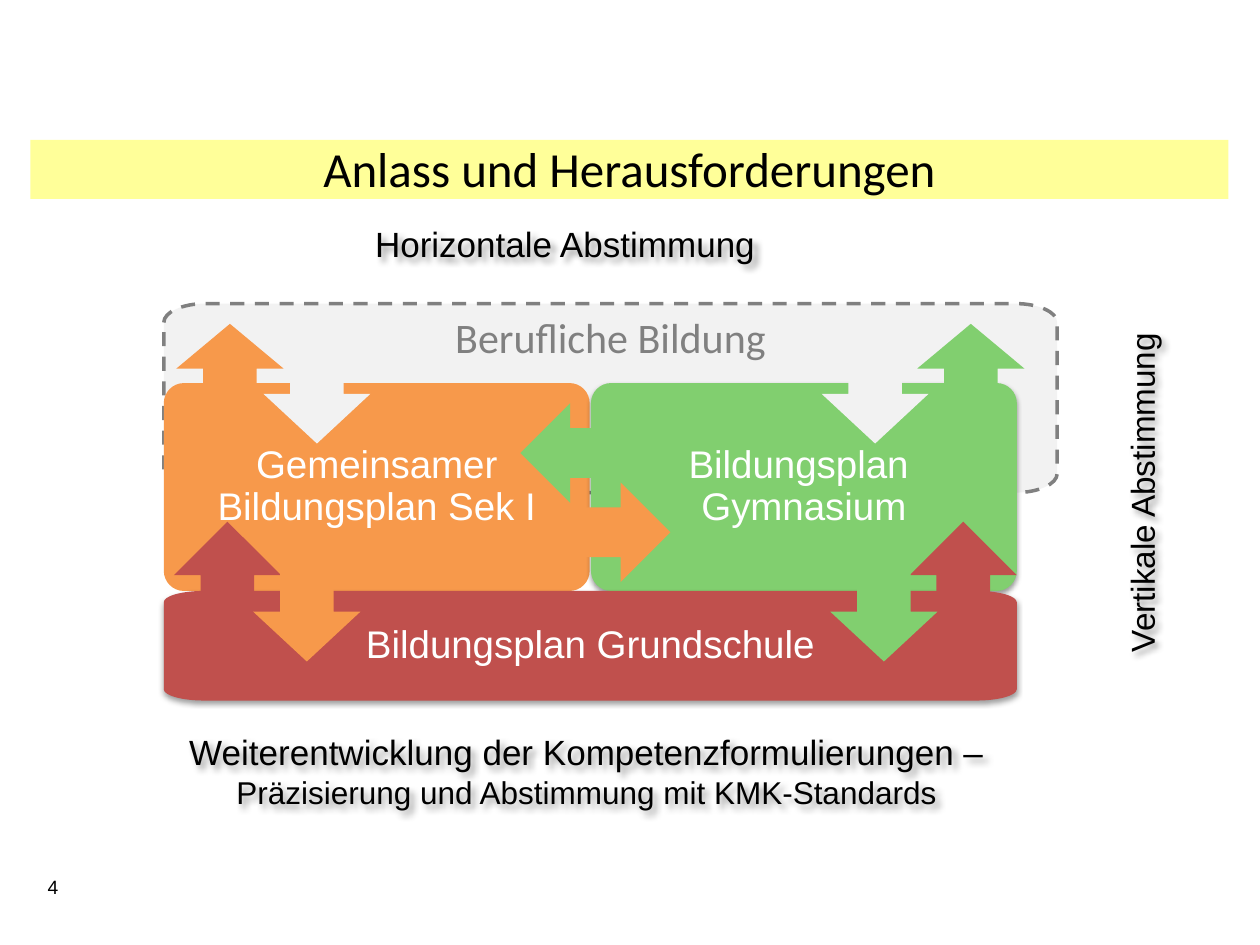
from dataclasses import dataclass

from lxml.etree import SubElement as Sub
from pptx import Presentation
from pptx.dml.color import RGBColor as Rgb
from pptx.enum.dml import MSO_LINE as Dash
from pptx.enum.shapes import MSO_SHAPE as Kind
from pptx.enum.text import MSO_ANCHOR as Anchor, PP_ALIGN as Align
from pptx.oxml.ns import qn
from pptx.util import Inches, Pt


@dataclass(frozen=True)
class Theme:
    black: str = "000000"
    white: str = "FFFFFF"
    band: str = "FFFF99"
    pale: str = "F2F2F2"
    gray: str = "808080"
    orange: str = "F7994B"
    green: str = "81CF6F"
    red: str = "C0504D"
    body: str = "Arial"
    head: str = "Calibri"
    title: int = 28
    top: int = 24
    plan: int = 22
    label: int = 20
    side: int = 19
    small: int = 18
    page: int = 11


T = Theme()


def paint(shape, fill=None):
    shape.shadow.inherit = False
    shape.line.fill.background()
    if fill:
        shape.fill.solid()
        shape.fill.fore_color.rgb = Rgb.from_string(fill)
    else:
        shape.fill.background()


def shade(shape, blur, dist, angle, alpha):
    effects = shape.element.spPr.find(qn("a:effectLst"))
    outer = Sub(effects, qn("a:outerShdw"), blurRad=str(Pt(blur)),
                dist=str(Pt(dist)), dir=str(angle * 60000), rotWithShape="0")
    color = Sub(outer, qn("a:srgbClr"), val=T.black)
    Sub(color, qn("a:alpha"), val=str(alpha * 1000))


def write(shape, runs, color=T.black, font=T.body, align=Align.CENTER,
          anchor=Anchor.MIDDLE, space=None, inset=None):
    frame = shape.text_frame
    frame.word_wrap = True
    frame.vertical_anchor = anchor
    if inset:
        frame.margin_left = frame.margin_right = Inches(inset)
        frame.margin_top = frame.margin_bottom = Inches(inset)
    para = frame.paragraphs[0]
    para.alignment = align
    para.line_spacing = space
    for text, size in runs:
        run = para.add_run()
        run.text = text
        run.font.size = Pt(size)
        run.font.name = font
        run.font.color.rgb = Rgb.from_string(color)


def block(shapes, kind, box, fill=None, turn=0):
    shape = shapes.add_shape(kind, *map(Inches, box))
    paint(shape, fill)
    shape.rotation = turn
    return shape


def note(shapes, box, runs, **style):
    write(shapes.add_textbox(*map(Inches, box)), runs, anchor=Anchor.TOP, **style)


def label(shape, runs):
    write(shape, runs)
    shade(shape, 4, 3, 45, 40)


def outline(shapes, box, curve, fill=None):
    x, y, w, h = map(Inches, box)
    rx, ry = map(Inches, curve)
    pen = shapes.build_freeform(x, y)
    pen.add_line_segments([(x + w, y), (x + w, y + h), (x, y + h)], close=True)
    shape = pen.convert_to_shape()
    paint(shape, fill)
    track = shape.element.spPr.find(".//" + qn("a:path"))
    for node in list(track):
        track.remove(node)

    def step(name, *points):
        node = Sub(track, qn("a:" + name))
        for px, py in points:
            Sub(node, qn("a:pt"), x=str(int(px)), y=str(int(py)))

    def bend(start, corner, end):
        pulls = [(px + (corner[0] - px) * 0.55, py + (corner[1] - py) * 0.55)
                 for px, py in (start, end)]
        step("cubicBezTo", *pulls, end)

    corners = [
        ((0, ry), (0, 0), (rx, 0)),
        ((w - rx, 0), (w, 0), (w, ry)),
        ((w, h - ry), (w, h), (w - rx, h)),
        ((rx, h), (0, h), (0, h - ry)),
    ]
    for index, (start, corner, end) in enumerate(corners):
        step("lnTo" if index else "moveTo", start)
        bend(start, corner, end)
    step("lnTo", (0, ry))
    step("close")
    return shape


def panel(shapes, box, curve, fill, text, size=T.plan, shadow=True, **style):
    shape = outline(shapes, box, curve, fill)
    if shadow:
        shade(shape, 3.1, 1.6, 90, 38)
    write(shape, [(text, size)], space=0.9, inset=0.11, **style)
    return shape


def panels(shapes):
    back = panel(shapes, (1.3, 2.41, 7.09, 1.5), (0.33, 0.15), T.pale,
                 "Berufliche Bildung", T.top, False,
                 color=T.gray, font=T.head, anchor=Anchor.TOP)
    back.line.color.rgb = Rgb.from_string(T.gray)
    back.line.width = Pt(2)
    back.line.dash_style = Dash.DASH
    panel(shapes, (1.3, 3.04, 3.38, 1.65), (0.16, 0.16), T.orange,
          "Gemeinsamer Bildungsplan Sek I", shadow=False, color=T.white)
    panel(shapes, (4.69, 3.04, 3.38, 1.65), (0.16, 0.16), T.green,
          "Bildungsplan  Gymnasium", color=T.white)
    panel(shapes, (1.3, 4.69, 6.77, 0.87), (0.32, 0.09), T.red,
          "Bildungsplan Grundschule", color=T.white)


def arrows(shapes):
    for box, turn, fill in [
        ((1.38, 4.14, 0.85, 1.02), 0, T.red),
        ((2.01, 4.46, 0.85, 0.79), 180, T.orange),
        ((7.22, 4.14, 0.85, 1.02), 0, T.red),
        ((6.59, 4.46, 0.85, 0.79), 180, T.green),
        ((4.49, 3.79, 0.79, 0.87), 90, T.orange),
        ((4.13, 3.2, 0.79, 0.79), 270, T.green),
        ((2.09, 2.73, 0.85, 0.79), 180, T.pale),
        ((1.4, 2.57, 0.85, 0.71), 0, T.orange),
        ((6.52, 2.73, 0.85, 0.79), 180, T.pale),
        ((7.28, 2.57, 0.85, 0.71), 0, T.green),
    ]:
        block(shapes, Kind.UP_ARROW, box, fill, turn)


def main():
    deck = Presentation()
    deck.slide_width, deck.slide_height = Inches(10), Inches(7.5)
    shapes = deck.slides.add_slide(deck.slide_layouts[6]).shapes

    block(shapes, Kind.RECTANGLE, (0.24, 1.11, 9.51, 0.47), T.band)
    note(shapes, (0.24, 1.05, 9.51, 0.57),
         [("Anlass und Herausforderungen", T.title)], font=T.head)
    note(shapes, (0.28, 6.9, 0.55, 0.29), [("4", T.page)], align=Align.LEFT)

    side = outline(shapes, (7.48, 3.32, 3.46, 1.18), (0.2, 0.2))
    side.rotation = 270
    label(side, [("Vertikale Abstimmung", T.side)])
    side.text_frame.margin_bottom = Inches(0.35)

    group = shapes.add_group_shape().shapes
    panels(group)
    arrows(group)

    for box, runs in [
        ((1.06, 1.7, 6.85, 0.47), [("Horizontale Abstimmung", T.label)]),
        ((1.23, 5.88, 6.85, 0.47),
         [("Weiterentwicklung der Kompetenzformulierungen – ", T.label),
          ("Präzisierung und Abstimmung mit KMK-Standards", T.small)]),
    ]:
        label(block(shapes, Kind.ROUNDED_RECTANGLE, box), runs)
    deck.save("out.pptx")


if __name__ == "__main__":
    main()
